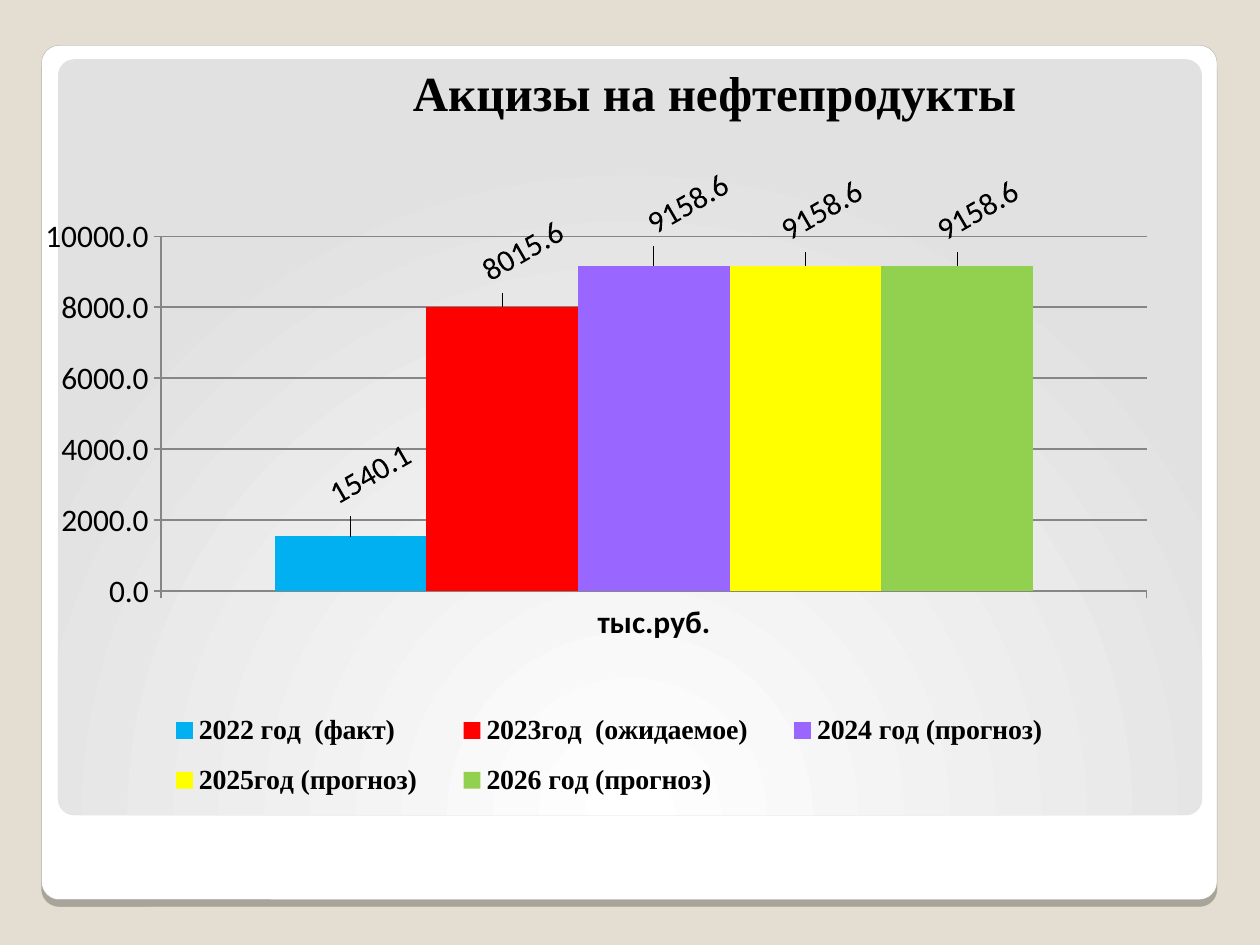
from lxml import etree
from pptx import Presentation
from pptx.chart import data as chart_data
from pptx.dml import color as dml
from pptx.enum import chart as charts, shapes, text
from pptx.oxml import ns, parse_xml
from pptx.util import Inches, Pt

COLORS = {
    "background": "E3DED1", "card": "FFFFFF", "card_line": "A4A3A3",
    "panel_edge": "E1E1E1", "ink": "000000", "grid": "868686",
}
SERIES = [
    ("2022 год  (факт) ", 1540.1, "00B0F0", (0.017, -0.03)),
    ("2023год  (ожидаемое)", 8015.6, "FF0000", (0.018, -0.02)),
    ("2024 год (прогноз)", 9158.6, "9966FF", (0.03, -0.03)),
    ("2025год (прогноз)", 9158.6, "FFFF00", (0.014, -0.02)),
    ("2026 год (прогноз)", 9158.6, "92D050", (0.018, -0.02)),
]


def rgb(value):
    return dml.RGBColor.from_string(value)


def set_font(font, name, size, bold=False):
    font.name = name
    font.size = Pt(size)
    font.bold = bold
    font.color.rgb = rgb(COLORS["ink"])


def make_layout(inner=False, edge=True, **fractions):
    layout = etree.Element(ns.qn("c:layout"))
    manual = etree.SubElement(layout, ns.qn("c:manualLayout"))
    settings = {}
    if inner:
        settings["layoutTarget"] = "inner"
    if edge:
        settings.update(xMode="edge", yMode="edge")
    settings.update(fractions)
    for tag, value in settings.items():
        etree.SubElement(manual, ns.qn("c:" + tag)).set("val", str(value))
    return layout


def add_rounded_box(page, left, top, width, height, radius):
    box = page.shapes.add_shape(
        shapes.MSO_SHAPE.ROUNDED_RECTANGLE,
        Inches(left), Inches(top), Inches(width), Inches(height))
    box.adjustments[0] = radius / min(width, height)
    box.shadow.inherit = False
    return box


def add_frame(page, left, top, width, height):
    card = add_rounded_box(page, left, top, width, height, 0.14)
    card.fill.solid()
    card.fill.fore_color.rgb = rgb(COLORS["card"])
    card.line.color.rgb = rgb(COLORS["card_line"])
    card.line.width = Pt(0.16)
    effects = card._element.spPr.find(ns.qn("a:effectLst"))
    effects.append(parse_xml(
        f'<a:outerShdw {ns.nsdecls("a")} blurRad="0" dist="{Pt(4)}" dir="5400000" '
        f'algn="t" rotWithShape="0"><a:srgbClr val="{COLORS["ink"]}">'
        '<a:alpha val="25000"/></a:srgbClr></a:outerShdw>'))

    panel = add_rounded_box(page, left + 0.13, top + 0.11, width - 0.25, 6, 0.13)
    panel.line.fill.background()
    panel.fill.gradient()
    gradient = panel._element.spPr.find(ns.qn("a:gradFill"))
    gradient.getparent().replace(gradient, parse_xml(
        f'<a:gradFill {ns.nsdecls("a")} rotWithShape="1"><a:gsLst>'
        f'<a:gs pos="0"><a:srgbClr val="{COLORS["card"]}"/></a:gs>'
        f'<a:gs pos="100000"><a:srgbClr val="{COLORS["panel_edge"]}"/></a:gs></a:gsLst>'
        '<a:path path="circle"><a:fillToRect l="50000" t="175000" r="50000" b="-75000"/>'
        '</a:path></a:gradFill>'))


def add_title(page, left, top, width, height):
    box = page.shapes.add_textbox(
        Inches(left), Inches(top), Inches(width), Inches(height))
    frame = box.text_frame
    frame.word_wrap = True
    frame.vertical_anchor = text.MSO_ANCHOR.BOTTOM
    para = frame.paragraphs[0]
    para.alignment = text.PP_ALIGN.CENTER
    span = para.add_run()
    span.text = "Акцизы на нефтепродукты"
    set_font(span.font, "Times New Roman", 28, True)


def style_series(series, fill_color, label_offset):
    series.format.fill.solid()
    series.format.fill.fore_color.rgb = rgb(fill_color)
    labels = series.data_labels
    labels.show_value = True
    labels.number_format = "0.0"
    labels.number_format_is_linked = False
    labels.position = charts.XL_LABEL_POSITION.OUTSIDE_END
    set_font(labels.font, "Calibri", 18)
    labels._element.find(".//" + ns.qn("a:bodyPr")).set("rot", "-1800000")

    point_label = series.points[0].data_label
    set_font(point_label.font, "Calibri", 18)
    point_label.position = charts.XL_LABEL_POSITION.OUTSIDE_END
    element = labels._element.find(ns.qn("c:dLbl"))
    element.find(".//" + ns.qn("a:bodyPr")).set("rot", "-1800000")
    x, y = label_offset
    element.insert(1, make_layout(edge=False, x=x, y=y))


def add_excise_chart(page, left, top, width, height):
    data = chart_data.CategoryChartData(number_format="0.0")
    data.categories = ["тыс.руб."]
    for name, value, _, _ in SERIES:
        data.add_series(name, [value])
    chart = page.shapes.add_chart(
        charts.XL_CHART_TYPE.COLUMN_CLUSTERED,
        Inches(left), Inches(top), Inches(width), Inches(height), data).chart
    chart.has_title = False
    set_font(chart.font, "Calibri", 18)

    plot = chart.plots[0]
    plot.gap_width = 150
    plot.overlap = 0
    plot.vary_by_categories = False
    for series, (_, _, fill_color, offset) in zip(plot.series, SERIES):
        style_series(series, fill_color, offset)

    for axis in (chart.category_axis, chart.value_axis):
        axis.major_tick_mark = charts.XL_TICK_MARK.OUTSIDE
        axis.format.line.color.rgb = rgb(COLORS["grid"])
        axis.format.line.width = Pt(0.75)
    set_font(chart.category_axis.tick_labels.font, "Calibri", 18, True)
    values = chart.value_axis
    set_font(values.tick_labels.font, "Calibri", 18)
    values.minimum_scale, values.maximum_scale, values.major_unit = 0, 10000, 2000
    values.tick_labels.number_format = "0.0"
    values.tick_labels.number_format_is_linked = False
    values.major_gridlines.format.line.color.rgb = rgb(COLORS["grid"])
    values.major_gridlines.format.line.width = Pt(0.75)

    chart.has_legend = True
    legend = chart.legend
    legend.position = charts.XL_LEGEND_POSITION.RIGHT
    legend.include_in_layout = False
    set_font(legend.font, "Times New Roman", 16, True)
    for parent, layout in (
        (legend._element, make_layout(x=0.08, y=0.8, w=0.84, h=0.18)),
        (chart._chartSpace.chart.plotArea,
         make_layout(inner=True, x=0.1, y=0.1, w=0.88, h=0.54)),
    ):
        for old in parent.findall(ns.qn("c:layout")):
            parent.remove(old)
        position = parent.find(ns.qn("c:legendPos"))
        parent.insert(0 if position is None else 1, layout)


def main():
    deck = Presentation()
    deck.slide_width, deck.slide_height = Inches(10), Inches(7.5)
    page = deck.slides.add_slide(deck.slide_layouts[6])
    page.background.fill.solid()
    page.background.fill.fore_color.rgb = rgb(COLORS["background"])
    add_frame(page, 0.33, 0.36, 9.33, 6.78)
    add_title(page, 1.57, 0.23, 8.2, 0.78)
    add_excise_chart(page, 0.36, 1.31, 8.92, 5.26)
    deck.save("out.pptx")


if __name__ == "__main__":
    main()
